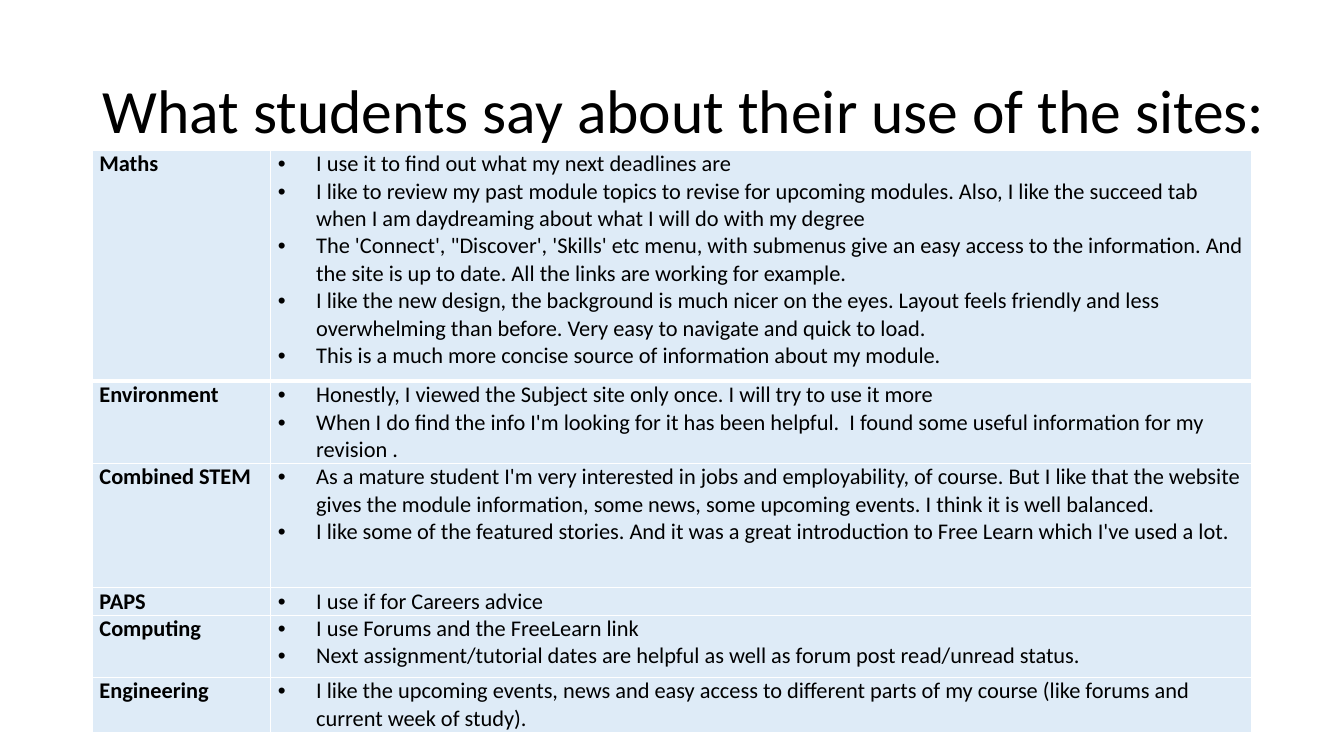
from lxml.etree import SubElement
from pptx import Presentation
from pptx.dml.color import RGBColor
from pptx.enum.text import MSO_ANCHOR, MSO_AUTO_SIZE, PP_ALIGN
from pptx.oxml.ns import qn
from pptx.util import Inches, Pt

HEADING = "What students say about their use of the sites:"

# Subject, row height in grid rows, comments
FEEDBACK = [
    ("Maths", 27.5, [
        "I use it to find out what my next deadlines are",
        "I like to review my past module topics to revise for upcoming modules. Also, "
        "I like the succeed tab when I am daydreaming about what I will do with my degree",
        "The 'Connect', \"Discover', 'Skills' etc menu, with submenus give an easy access "
        "to the information. And the site is up to date. All the links are working for example.",
        "I like the new design, the background is much nicer on the eyes. Layout feels friendly "
        "and less overwhelming than before. Very easy to navigate and quick to load.",
        "This is a much more concise source of information about my module.",
    ]),
    ("Environment", 8.9, [
        "Honestly, I viewed the Subject site only once. I will try to use it more",
        "When I do find the info I'm looking for it has been helpful.  "
        "I found some useful information for my revision .",
    ]),
    ("Combined STEM", 14.8, [
        "As a mature student I'm very interested in jobs and employability, of course. "
        "But I like that the website gives the module information, some news, "
        "some upcoming events. I think it is well balanced.",
        "I like some of the featured stories. And it was a great introduction to "
        "Free Learn which I've used a lot.",
    ]),
    ("PAPS", 3, ["I use if for Careers advice"]),
    ("Computing", 7.4, [
        "I use Forums and the FreeLearn link",
        "Next assignment/tutorial dates are helpful as well as forum post read/unread status.",
    ]),
    ("Engineering", 5.9, [
        "I like the upcoming events, news and easy access to different parts of my course "
        "(like forums and current week of study).",
    ]),
]


def colour(value):
    return RGBColor.from_string(value)


class FeedbackSlide:
    FONT, INK, PANEL, RULE = "Calibri", "000000", "DEEBF7", "FFFFFF"
    COLUMNS, ROWS = 160, 90

    def __init__(self, deck):
        self.slide = deck.slides.add_slide(deck.slide_layouts[5])
        self.column = deck.slide_width / self.COLUMNS
        self.row = deck.slide_height / self.ROWS

    def across(self, columns):
        return round(columns * self.column)

    def down(self, rows):
        return round(rows * self.row)

    def add_text(self, paragraph, text, size, bold=False):
        run = paragraph.add_run()
        run.text = text
        run.font.name, run.font.size, run.font.bold = self.FONT, Pt(size), bold
        run.font.color.rgb = colour(self.INK)

    def title(self, text, left, top, width, height):
        heading = self.slide.shapes.title
        heading.left, heading.top = self.across(left), self.down(top)
        heading.width, heading.height = self.across(width), self.down(height)
        frame = heading.text_frame
        frame.auto_size = MSO_AUTO_SIZE.NONE
        frame.vertical_anchor = MSO_ANCHOR.MIDDLE
        paragraph = frame.paragraphs[0]
        paragraph.alignment = PP_ALIGN.LEFT
        paragraph.line_spacing = 0.9
        self.add_text(paragraph, text, 44)

    def cell(self, cell, bottom_rule):
        cell.margin_left = cell.margin_right = Inches(0.07)
        cell.margin_top = cell.margin_bottom = 0
        properties = cell._tc.get_or_add_tcPr()
        for side, width in (("L", 1), ("R", 1), ("T", 1), ("B", bottom_rule)):
            line = SubElement(properties, qn(f"a:ln{side}"), w=str(Pt(width)))
            fill = SubElement(line, qn("a:solidFill"))
            SubElement(fill, qn("a:srgbClr"), val=self.RULE)
        cell.fill.solid()
        cell.fill.fore_color.rgb = colour(self.PANEL)
        return cell.text_frame

    def bullet(self, paragraph, text):
        properties = paragraph._p.get_or_add_pPr()
        indent = Inches(0.38)
        properties.set("marL", str(indent))
        properties.set("indent", str(-indent))
        SubElement(properties, qn("a:buFont"), typeface="Arial")
        SubElement(properties, qn("a:buChar"), char="•")
        self.add_text(paragraph, text, 16)

    def table(self, feedback, left, top, widths):
        height = sum(rows for _, rows, _ in feedback)
        table = self.slide.shapes.add_table(
            len(feedback), len(widths), self.across(left), self.down(top),
            self.across(sum(widths)), self.down(height)).table
        table.first_row = table.horz_banding = False
        for column, width in zip(table.columns, widths):
            column.width = self.across(width)
        for index, (subject, rows, comments) in enumerate(feedback):
            table.rows[index].height = self.down(rows)
            bottom_rule = 3 if index == 0 else 1
            # Subject
            label = self.cell(table.cell(index, 0), bottom_rule).paragraphs[0]
            label.space_before = Pt(2)
            self.add_text(label, subject, 16, bold=True)
            # Comments
            quotes = self.cell(table.cell(index, 1), bottom_rule)
            for number, comment in enumerate(comments):
                paragraph = quotes.add_paragraph() if number else quotes.paragraphs[0]
                self.bullet(paragraph, comment)


def main():
    deck = Presentation()
    deck.slide_width, deck.slide_height = Inches(13.33), Inches(7.5)
    page = FeedbackSlide(deck)
    # Heading
    page.title(HEADING, left=11, top=4.8, width=142, height=17.4)
    # Comments by subject
    page.table(FEEDBACK, left=11, top=17.9, widths=(21.25, 116.8))
    deck.save("out.pptx")


if __name__ == "__main__":
    main()
